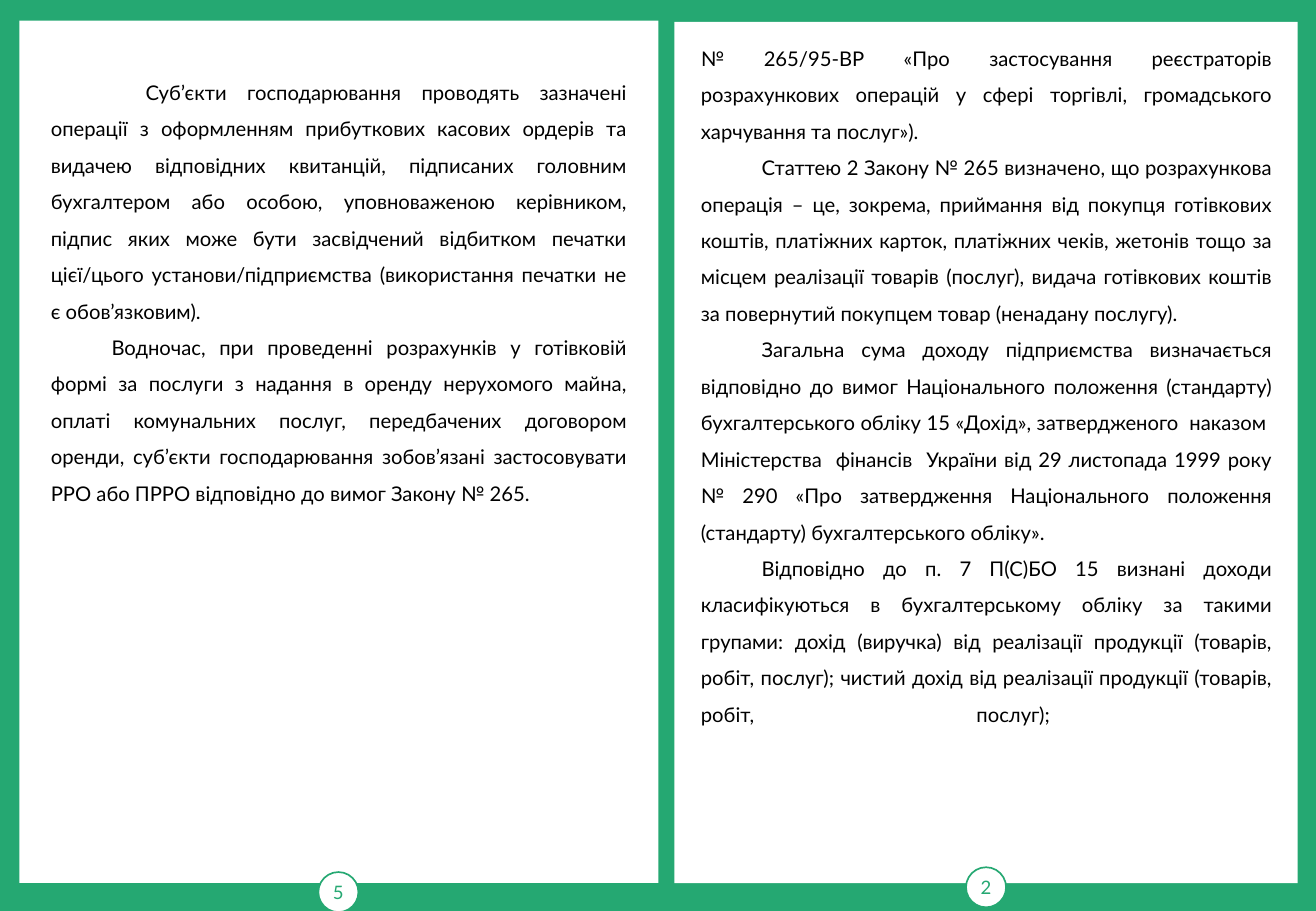
"""Build a two-page booklet spread on cash settlement rules."""
import pptx
import pptx.dml.color
import pptx.enum.shapes
import pptx.enum.text
import pptx.util

PX = 9144
GREEN = "25A872"
WHITE = "FFFFFF"
BLACK = "000000"
FONT = "Lato"
INDENT = 50

LEFT_TEXT = [
    (78, "Суб’єкти господарювання проводять зазначені операції з оформленням "
     "прибуткових касових ордерів та видачею відповідних квитанцій, підписаних "
     "головним бухгалтером або особою, уповноваженою керівником, підпис яких може "
     "бути засвідчений відбитком печатки цієї/цього установи/підприємства "
     "(використання печатки не є обов’язковим)."),
    (INDENT, "Водночас, при проведенні розрахунків у готівковій формі за послуги з "
     "надання в оренду нерухомого майна, оплаті комунальних послуг, передбачених "
     "договором оренди, суб’єкти господарювання зобов’язані застосовувати РРО або "
     "ПРРО відповідно до вимог Закону № 265."),
]
RIGHT_TEXT = [
    (0, "№ 265/95-ВР «Про застосування реєстраторів розрахункових операцій у сфері "
     "торгівлі, громадського харчування та послуг»)."),
    (INDENT, "Статтею 2 Закону № 265 визначено, що розрахункова операція – це, "
     "зокрема, приймання від покупця готівкових коштів, платіжних карток, платіжних "
     "чеків, жетонів тощо за місцем реалізації товарів (послуг), видача готівкових "
     "коштів за повернутий покупцем товар (ненадану послугу)."),
    (INDENT, "Загальна сума доходу підприємства визначається відповідно до вимог "
     "Національного положення (стандарту) бухгалтерського обліку 15 «Дохід», "
     "затвердженого  наказом  Міністерства  фінансів  України від 29 листопада 1999 "
     "року № 290 «Про затвердження Національного положення (стандарту) "
     "бухгалтерського обліку»."),
    (INDENT, "Відповідно до п. 7 П(С)БО 15 визнані доходи класифікуються в "
     "бухгалтерському обліку за такими групами: дохід (виручка) від реалізації "
     "продукції (товарів, робіт, послуг); чистий дохід від реалізації продукції "
     "(товарів, робіт, послуг); \v"),
]


def color(hex_code):
    return pptx.dml.color.RGBColor.from_string(hex_code)


def px(*lengths):
    return [pptx.util.Emu(length * PX) for length in lengths]


def style_font(font, size, hex_code):
    font.name = FONT
    font.size = pptx.util.Pt(size)
    font.color.rgb = color(hex_code)


def add_white_shape(page, kind, box):
    shape = page.shapes.add_shape(kind, *px(*box))
    shape.shadow.inherit = False
    shape.fill.solid()
    shape.fill.fore_color.rgb = color(WHITE)
    shape.line.fill.background()
    return shape


def add_page(slide, sheet_box, badge_box, number):
    page = slide.shapes.add_group_shape()
    kinds = pptx.enum.shapes.MSO_SHAPE
    add_white_shape(page, kinds.RECTANGLE, sheet_box)
    badge = add_white_shape(page, kinds.OVAL, badge_box)
    badge.line.color.rgb = color(GREEN)
    badge.line.width = pptx.util.Pt(1)
    frame = badge.text_frame
    frame.margin_left = frame.margin_right = 0
    frame.margin_top = frame.margin_bottom = 0
    frame.vertical_anchor = pptx.enum.text.MSO_ANCHOR.MIDDLE
    frame.text = number
    label = frame.paragraphs[0]
    label.alignment = pptx.enum.text.PP_ALIGN.CENTER
    style_font(label.runs[0].font, 11, GREEN)


def add_body(slide, box, anchor, passages):
    frame = slide.shapes.add_textbox(*px(*box)).text_frame
    frame.word_wrap = True
    frame.vertical_anchor = anchor
    for index, (indent, passage) in enumerate(passages):
        paragraph = frame.add_paragraph() if index else frame.paragraphs[0]
        paragraph.text = passage
        paragraph.alignment = pptx.enum.text.PP_ALIGN.JUSTIFY
        paragraph.line_spacing = 1.5
        properties = paragraph._p.get_or_add_pPr()
        properties.set("marL", "0")
        properties.set("indent", str(indent * PX))
        style_font(paragraph.font, 12, BLACK)
        for run in paragraph.runs:
            style_font(run.font, 12, BLACK)


def main():
    booklet = pptx.Presentation()
    booklet.slide_width, booklet.slide_height = px(1083, 750)
    spread = booklet.slides.add_slide(booklet.slide_layouts[6])
    spread.background.fill.solid()
    spread.background.fill.fore_color.rgb = color(GREEN)

    add_page(spread, (16, 17, 526, 710), (262, 718, 33, 33), "5")
    add_page(spread, (555, 18, 513, 709), (795, 714, 33, 33), "2")

    anchors = pptx.enum.text.MSO_ANCHOR
    add_body(spread, (32, 19, 494, 434), anchors.MIDDLE, LEFT_TEXT)
    add_body(spread, (567, 23, 490, 735), anchors.TOP, RIGHT_TEXT)
    booklet.save("out.pptx")


if __name__ == "__main__":
    main()
